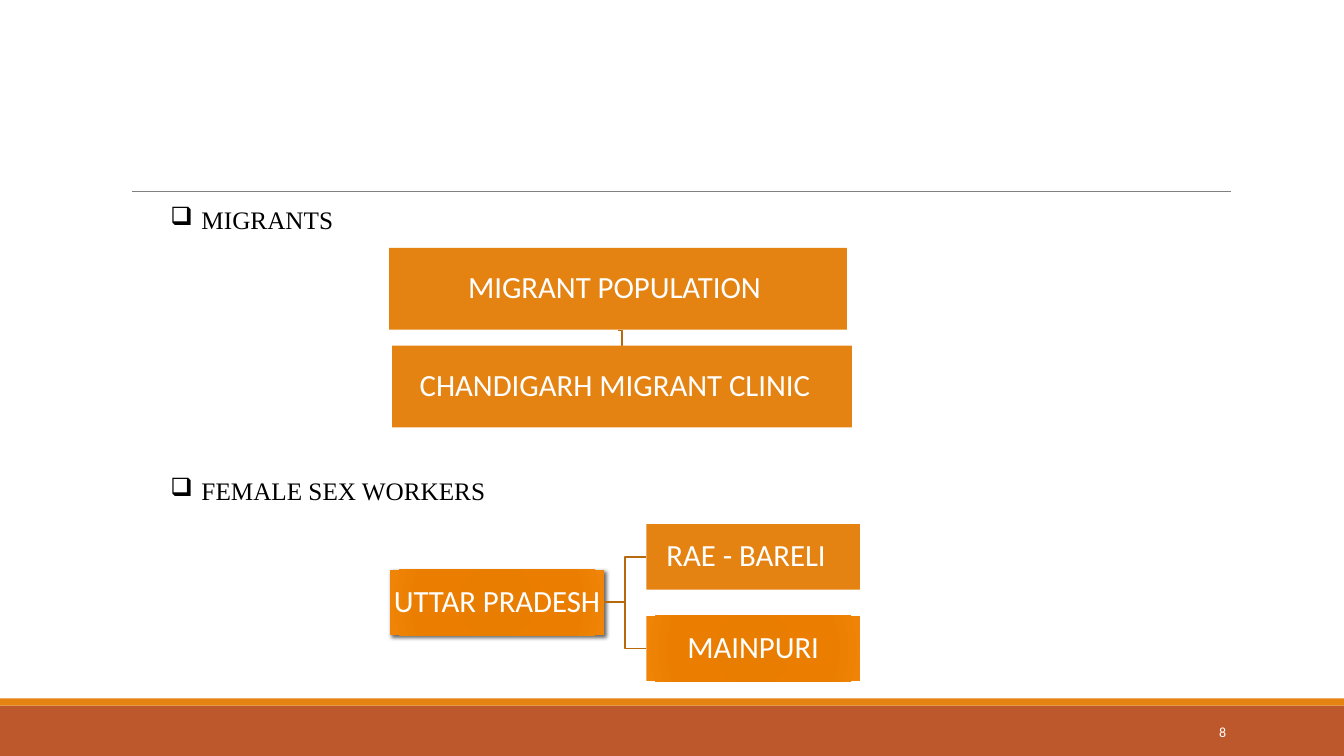
from lxml import etree
from pptx import Presentation
from pptx.dml.color import RGBColor
from pptx.enum.shapes import MSO_CONNECTOR, MSO_SHAPE
from pptx.enum.text import MSO_ANCHOR, PP_ALIGN
from pptx.oxml.ns import qn
from pptx.util import Emu, Inches, Pt

RECTANGLE = MSO_SHAPE.RECTANGLE
STRAIGHT, ELBOW = MSO_CONNECTOR.STRAIGHT, MSO_CONNECTOR.ELBOW
LEFT, CENTER, RIGHT = PP_ALIGN.LEFT, PP_ALIGN.CENTER, PP_ALIGN.RIGHT
TOP, MIDDLE = MSO_ANCHOR.TOP, MSO_ANCHOR.MIDDLE
LEFT_SIDE, RIGHT_SIDE = 1, 3

COLORS = {"rust": "BD582C", "orange": "E48312", "branch": "B7690E",
          "rule": "808080", "white": "FFFFFF", "black": "000000"}
GLOW = [(0, "E57B00"), (34, "E87D00"), (70, "EB7E00"), (100, "EF8407")]


def add_node(parent, tag, **attributes):
    values = {name: str(value) for name, value in attributes.items()}
    return etree.SubElement(parent, qn(tag), values)


class SlideBuilder:
    body_font = "Calibri"
    heading_font = "Times New Roman"

    def __init__(self, slide):
        self.slide = slide

    def color(self, name):
        return RGBColor.from_string(COLORS[name])

    def add_text(self, shape, text, size, font, color, align, anchor=MIDDLE):
        frame = shape.text_frame
        frame.word_wrap = True
        frame.vertical_anchor = anchor
        paragraph = frame.paragraphs[0]
        paragraph.alignment = align
        run = paragraph.add_run()
        run.text = text
        run.font.size = Pt(size)
        run.font.name = font
        run.font.color.rgb = self.color(color)
        return paragraph

    def rectangle(self, left, top, width, height, color):
        shape = self.slide.shapes.add_shape(
            RECTANGLE, Inches(left), Inches(top), Inches(width), Inches(height))
        shape.shadow.inherit = False
        shape.fill.solid()
        shape.fill.fore_color.rgb = self.color(color)
        shape.line.fill.background()
        return shape

    def box(self, text, left, top, width, height, right_inset=0.02):
        shape = self.rectangle(left, top, width, height, "orange")
        frame = shape.text_frame
        frame.margin_left = frame.margin_top = frame.margin_bottom = Inches(0.02)
        frame.margin_right = Inches(right_inset)
        paragraph = self.add_text(shape, text, 22, self.body_font, "white", CENTER)
        paragraph.line_spacing = 0.9
        return shape

    def glow(self, shape):
        properties = shape._element.spPr
        gradient = etree.Element(qn("a:gradFill"), rotWithShape="1")
        stops = add_node(gradient, "a:gsLst")
        for position, color in GLOW:
            stop = add_node(stops, "a:gs", pos=position * 1000)
            add_node(stop, "a:srgbClr", val=color)
        circle = add_node(gradient, "a:path", path="circle")
        add_node(circle, "a:fillToRect", l=100000, t=100000, r=100000, b=100000)
        properties.replace(properties.find(qn("a:solidFill")), gradient)

    def drop_shadow(self, shape):
        effects = shape._element.spPr.find(qn("a:effectLst"))
        shadow = add_node(effects, "a:outerShdw", blurRad=Pt(3), dist=Pt(2),
                          dir=45 * 60000, algn="ctr", rotWithShape=0)
        color = add_node(shadow, "a:srgbClr", val=COLORS["black"])
        add_node(color, "a:alpha", val=60000)

    def connector(self, kind, start, end, color, width):
        line = self.slide.shapes.add_connector(
            kind, *(Inches(value) for value in start + end))
        line.line.color.rgb = self.color(color)
        line.line.width = Pt(width)
        add_node(line._element.spPr, "a:effectLst")
        return line

    def branch(self, parent, child):
        line = self.connector(ELBOW, (0, 0), (1, 1), "branch", 1.25)
        line.begin_connect(parent, RIGHT_SIDE)
        line.end_connect(child, LEFT_SIDE)

    def bent_line(self, points):
        corners = [(Inches(x), Inches(y)) for x, y in points]
        builder = self.slide.shapes.build_freeform(*corners[0], scale=Emu(1))
        builder.add_line_segments(corners[1:], close=False)
        shape = builder.convert_to_shape()
        shape.shadow.inherit = False
        shape.fill.background()
        shape.line.color.rgb = self.color("branch")
        shape.line.width = Pt(1.25)

    def text_box(self, text, left, top, width, size, font, color, align, anchor):
        shape = self.slide.shapes.add_textbox(
            Inches(left), Inches(top), Inches(width), Inches(0.4))
        return self.add_text(shape, text, size, font, color, align, anchor)

    def heading(self, text, top):
        paragraph = self.text_box(text, 1.59, top, 3.52, 18, self.heading_font,
                                  "black", LEFT, TOP)
        properties = paragraph._p.get_or_add_pPr()
        properties.set("marL", str(Inches(0.31)))
        properties.set("indent", str(Inches(-0.31)))
        add_node(properties, "a:buChar", char="❑")


def main():
    presentation = Presentation()
    presentation.slide_width = Inches(13.33)
    presentation.slide_height = Inches(7.5)
    builder = SlideBuilder(
        presentation.slides.add_slide(presentation.slide_layouts[6]))

    builder.rectangle(0, 7, 13.33, 0.5, "rust")
    builder.rectangle(0, 6.93, 13.33, 0.07, "orange")
    builder.connector(STRAIGHT, (1.31, 1.9), (12.21, 1.9), "rule", 0.5)
    builder.text_box("8", 10.83, 7.06, 1.43, 10, builder.body_font,
                     "white", RIGHT, MIDDLE)

    builder.heading("MIGRANTS", 1.98)
    builder.bent_line([(6.13, 3.28), (6.17, 3.28), (6.17, 3.43)])
    builder.box("MIGRANT POPULATION", 3.86, 2.46, 4.54, 0.81, 0.09)
    builder.box("CHANDIGARH MIGRANT CLINIC", 3.89, 3.43, 4.56, 0.81, 0.16)

    builder.heading("FEMALE SEX WORKERS", 4.67)
    state = builder.box("UTTAR PRADESH", 3.87, 5.65, 2.12, 0.65)
    rae_bareli = builder.box("RAE - BARELI", 6.41, 5.2, 2.12, 0.65, 0.16)
    mainpuri = builder.box("MAINPURI", 6.41, 6.11, 2.12, 0.65)
    builder.glow(state)
    builder.drop_shadow(state)
    builder.glow(mainpuri)
    for district in (rae_bareli, mainpuri):
        builder.branch(state, district)

    presentation.save("out.pptx")


if __name__ == "__main__":
    main()
